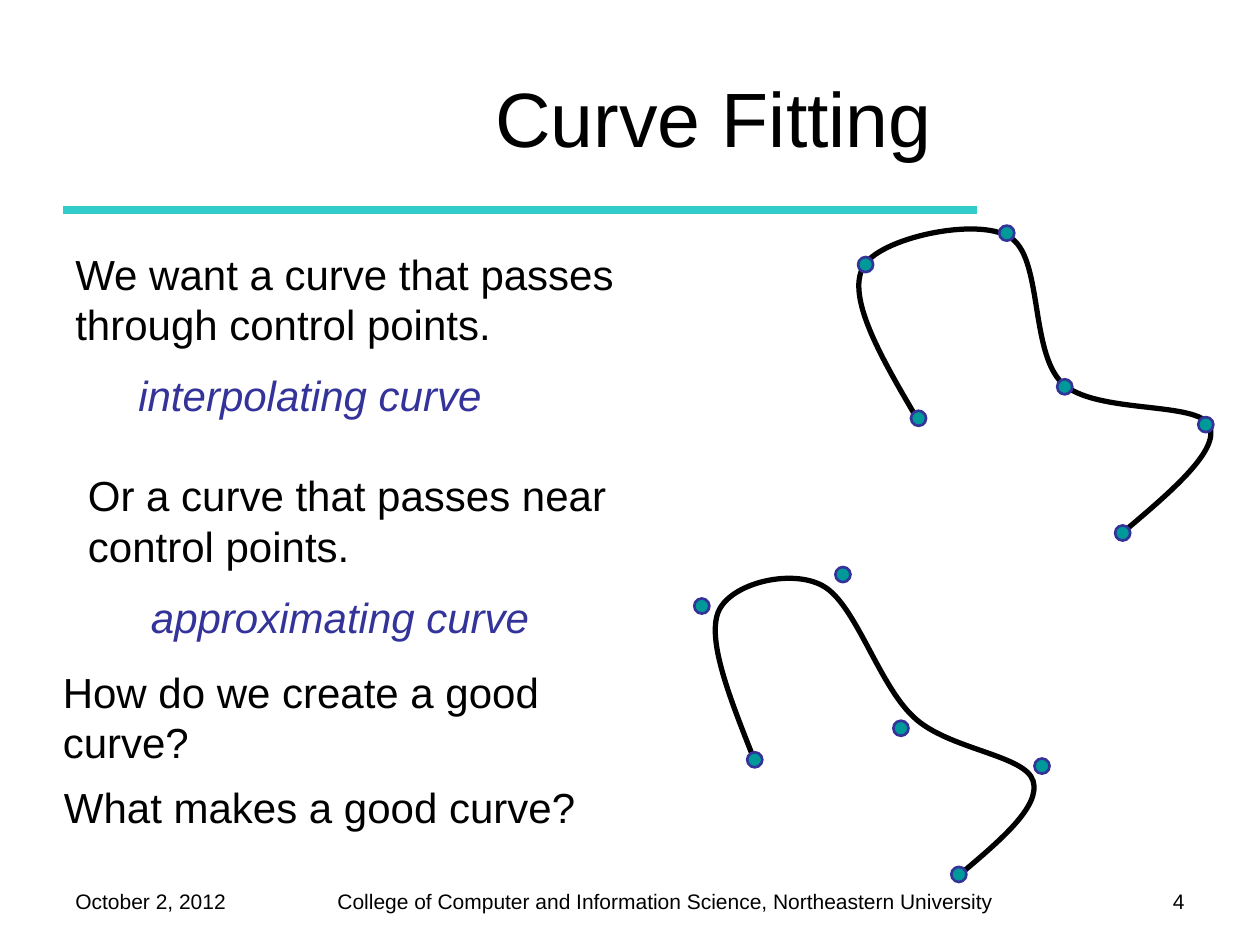
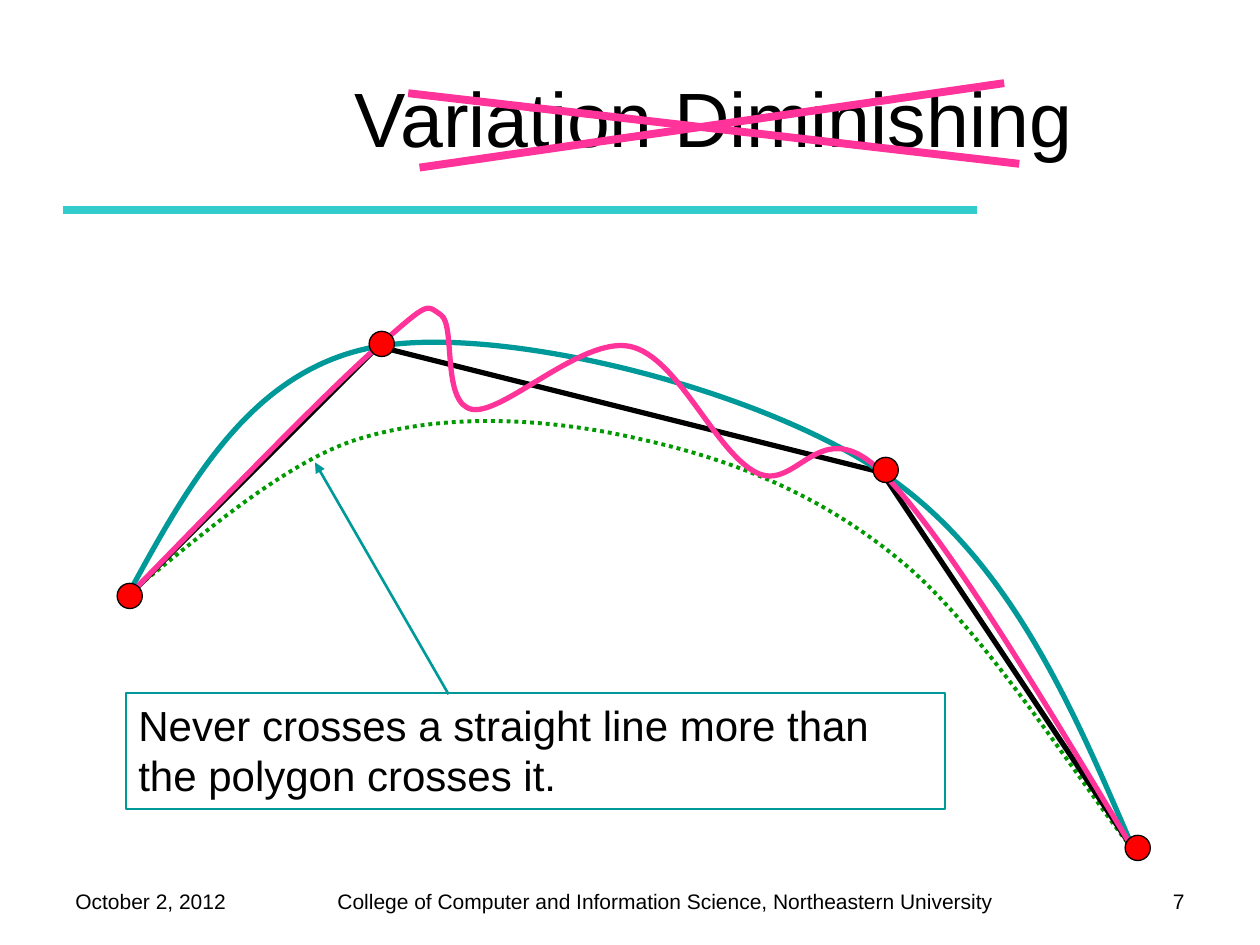
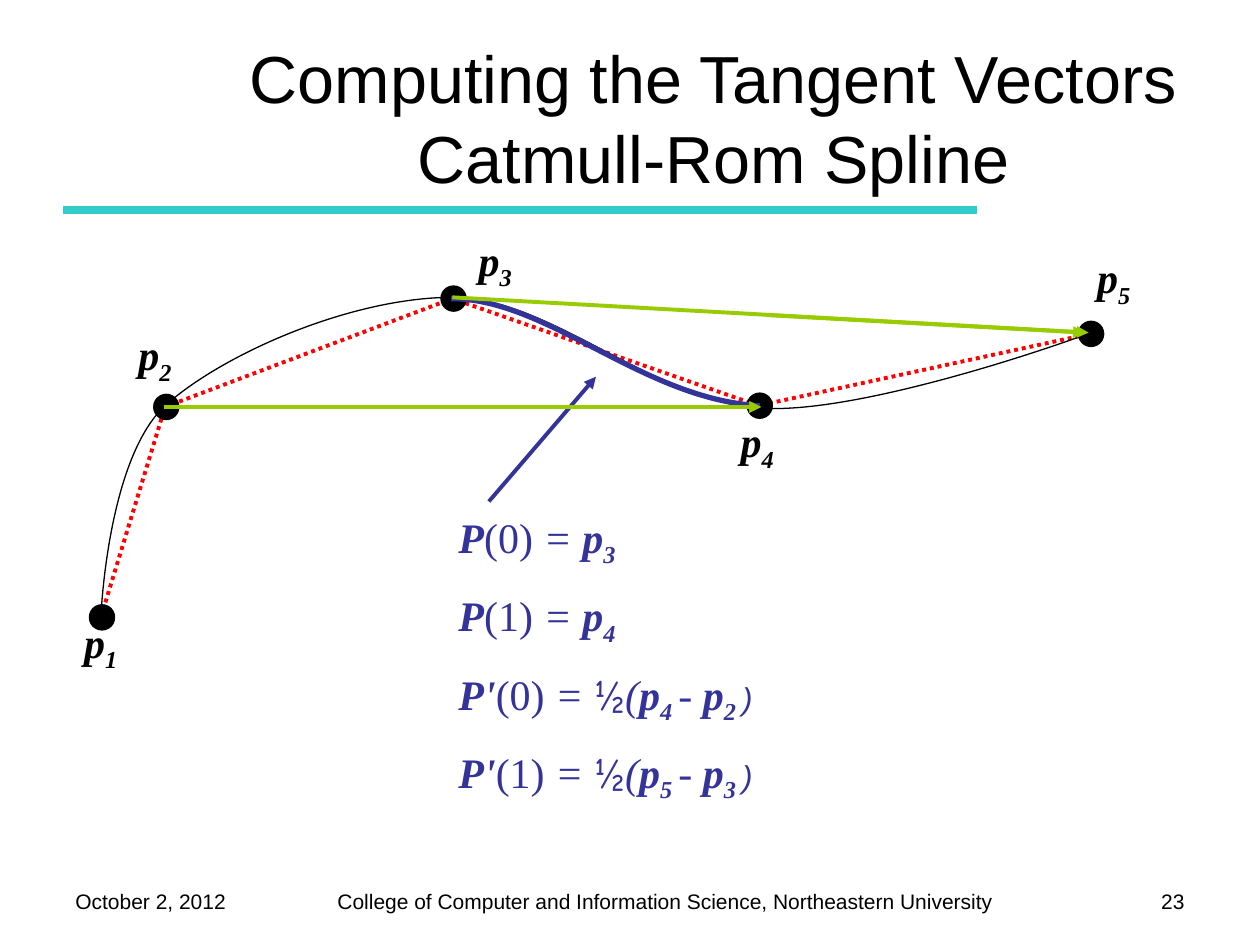
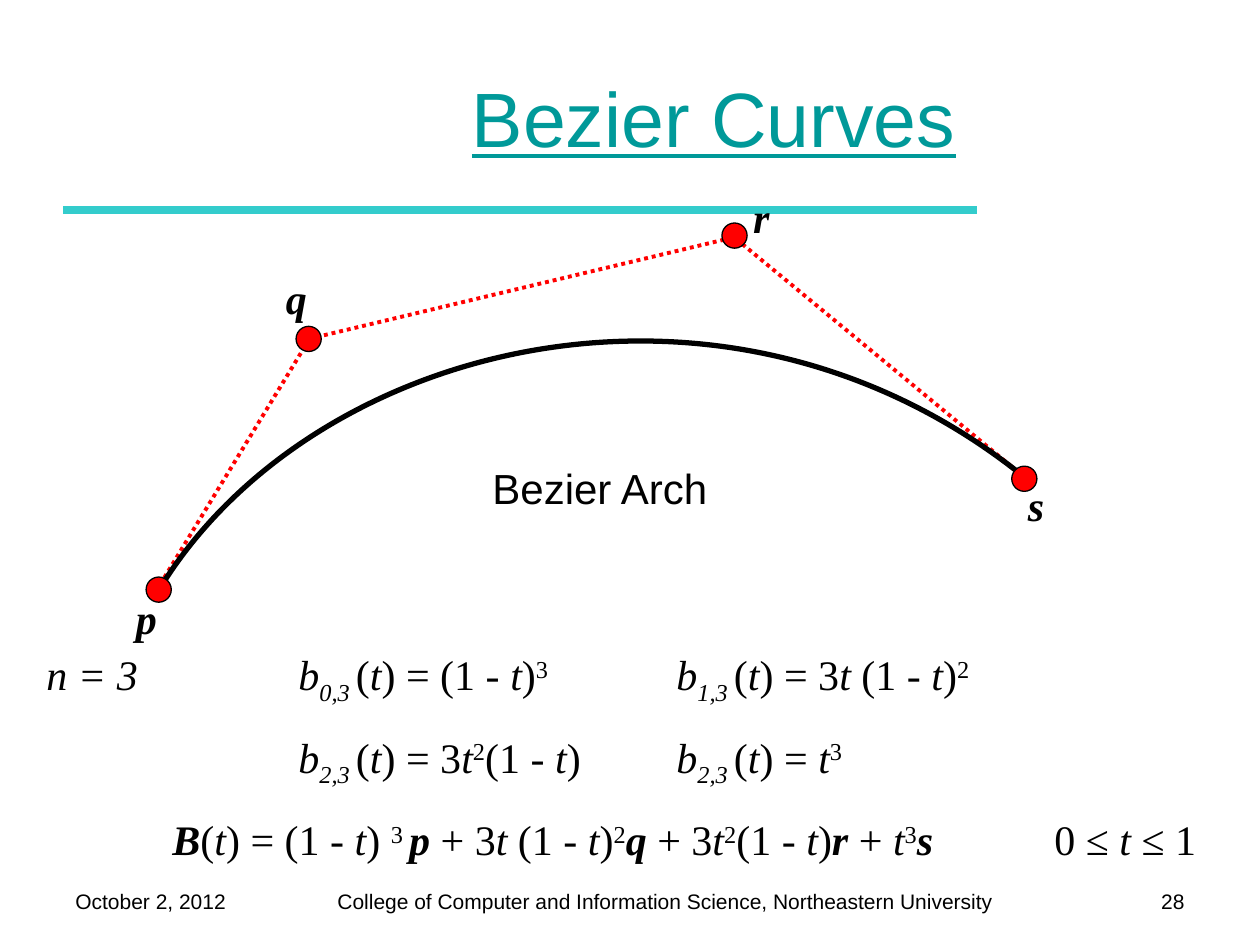
import pptx
import pptx.util
import pptx.dml.color
import pptx.enum.dml
import pptx.enum.shapes
import pptx.enum.text
import pptx.oxml.ns
import lxml.etree

Inches = pptx.util.Inches
Pt = pptx.util.Pt
RGBColor = pptx.dml.color.RGBColor
qn = pptx.oxml.ns.qn
Align = pptx.enum.text.PP_ALIGN
AutoSize = pptx.enum.text.MSO_AUTO_SIZE
DOTTED = pptx.enum.dml.MSO_LINE.ROUND_DOT

BLACK = RGBColor(0, 0, 0)
TEAL = RGBColor(0x00, 0x99, 0x99)
TURQUOISE = RGBColor(0x33, 0xCC, 0xCC)
INDIGO = RGBColor(0x33, 0x33, 0x99)
RED = RGBColor(0xFF, 0, 0)
PINK = RGBColor(0xFF, 0x33, 0x99)
GREEN = RGBColor(0x00, 0x99, 0x00)
LIME = RGBColor(0x99, 0xCC, 0x00)
ARIAL = "Arial"
TIMES = "Times New Roman"

DATE = "October 2, 2012"
FOOTER = "College of Computer and Information Science, Northeastern University"

# Text is split at "|"; the first letter of each part selects its style.
STYLES = {
    "r": {},
    "i": {"italic": True},
    "b": {"bold": True, "italic": True},
    "s": {"bold": True, "italic": True, "baseline": -25},
    "_": {"italic": True, "baseline": -25},
    "^": {"baseline": 30},
    "v": {"italic": True, "color": INDIGO},
    "h": {"name": "Comic Neue"},
    "c": {"name": ARIAL, "size": 18, "italic": True},
}

FITTING_TEXTS = [
    ((0.5, 1.92, 4.5, 1.5),
     ["rWe want a curve that passes through control points.", "v\tinterpolating curve"]),
    ((0.4, 5.24, 4.5, 0.9), ["rHow do we create a good curve?"]),
    ((0.41, 6.15, 4.5, 0.5), ["rWhat makes a good curve?"]),
    ((0.6, 3.68, 4.5, 1.5),
     ["rOr a curve that passes near control points.", "v\tapproximating curve"]),
]
INTERPOLATING = [
    (7.26, 3.29), (6.99, 2.83), (6.72, 2.36), (6.85, 2.12), (6.97, 1.89), (7.75, 1.72),
    (8.01, 1.88), (8.28, 2.03), (8.17, 2.79), (8.43, 3.04), (8.69, 3.29), (9.51, 3.18),
    (9.6, 3.38), (9.68, 3.57), (9.31, 3.89), (8.93, 4.21)]
APPROXIMATING = [
    (5.99, 6.04), (5.8, 5.56), (5.61, 5.09), (5.7, 4.86), (5.79, 4.63), (6.28, 4.51),
    (6.53, 4.65), (6.79, 4.79), (6.97, 5.43), (7.25, 5.69), (7.52, 5.95), (8.14, 5.99),
    (8.2, 6.2), (8.26, 6.4), (7.94, 6.67), (7.62, 6.94)]
CONTROL_POINTS = [(7.29, 3.32), (8.45, 3.07), (6.87, 2.1), (7.99, 1.85), (9.57, 3.37), (8.91, 4.23)]
APPROXIMATING_SHIFT = (-1.3, 2.71)

POLYGON = [(1, 4.75), (3, 2.75), (7, 3.75), (9, 6.75)]
INNER_CURVE = [
    (1, 4.72), (1.31, 4.51), (2.18, 3.68), (2.86, 3.48), (3.55, 3.27), (4.38, 3.32),
    (5.1, 3.49), (5.82, 3.65), (6.53, 3.93), (7.17, 4.47), (7.82, 5.01), (8.61, 6.27),
    (8.99, 6.74)]
SMOOTH_CURVE = [
    (1, 4.75), (1.5, 3.83), (2, 2.92), (3, 2.75), (4, 2.58), (6, 3.08),
    (7, 3.75), (8, 4.42), (8.5, 5.58), (9, 6.75)]
WAVY_CURVE = [
    (1, 4.75), (1.79, 3.94), (2.58, 3.12), (3, 2.75), (3.42, 2.38), (3.38, 2.42),
    (3.5, 2.5), (3.62, 2.58), (3.5, 3.21), (3.75, 3.25), (4, 3.29), (4.62, 2.67),
    (5, 2.75), (5.38, 2.83), (5.67, 3.58), (6, 3.75), (6.33, 3.92), (6.5, 3.25),
    (7, 3.75), (7.5, 4.25), (8.25, 5.5), (9, 6.75)]
CROSS = [((3.24, 0.74), (8.09, 1.3)), ((3.33, 1.33), (7.97, 0.66))]
VARIATION_NOTE = "rNever crosses a straight line more than the polygon crosses it."

SPLINE_POINTS = [(0.8, 4.9), (1.31, 3.23), (3.59, 2.37), (6.02, 3.22), (8.65, 2.65)]
SPLINE_LABELS = [(0.57, 4.84), (1, 2.56), (3.7, 1.81), (5.78, 3.25), (8.61, 1.95)]
SPLINE = [
    (0.8, 4.91), (0.8, 4.9), (0.85, 3.65), (1.31, 3.22), (1.78, 2.8), (2.8, 2.36),
    (3.59, 2.36), (4.38, 2.36), (5.2, 3.2), (6.05, 3.24), (6.89, 3.29), (8.68, 2.64),
    (8.68, 2.63)]
SPLINE_PIECE = [(3.58, 2.37), (4.35, 2.37), (5.1, 3.17), (6.03, 3.22)]
TANGENTS = [
    ((1.3, 3.23), (6.04, 3.23)), ((3.67, 3.23), (6.04, 3.23)),
    ((3.59, 2.36), (8.64, 2.64)), ((6.08, 2.5), (8.61, 2.64))]


def tangent_rule(end, first, second):
    return f"bP'|r({end})|i = |h½|i(|bp|s{first} |i- |bp|s{second} |c)"


SPLINE_RULES = [
    "bP|r(0)|i = |bp|s3",
    "bP|r(1)|i = |bp|s4",
    tangent_rule(0, 4, 2),
    tangent_rule(1, 5, 3),
]

BEZIER_POINTS = [(1.26, 4.68), (2.45, 2.69), (5.83, 1.87), (8.13, 3.8)]
BEZIER_ARCH = [(1.25, 4.7), (2.45, 2.7), (5.79, 1.86), (8.17, 3.82)]
BEZIER_SIDES = [
    ((1.24, 4.69), (2.45, 2.7)), ((8.17, 3.82), (5.81, 1.87)), ((2.45, 2.69), (5.84, 1.88))]
BEZIER_LABELS = [("p", 0.98, 4.65), ("q", 2.17, 2.11), ("r", 5.88, 1.47), ("s", 8.06, 3.76)]
ONE_MINUS_T = "r(1 - |it|r)"


def basis(index):
    return f"ib|_{index},3 |r(|it|r) = "


BEZIER_FORMULAS = [
    f"in = 3|r\t|{basis(0)}|{ONE_MINUS_T}|^3|r\t|{basis(1)}|r3|it |{ONE_MINUS_T}|^2",
    f"r\t|{basis(2)}|r3|it|^2|{ONE_MINUS_T}|r\t|{basis(2)}|it|^3",
    f"b\tB|r(|it|r) = |{ONE_MINUS_T}|r |^3 |bp |r+ 3|it |{ONE_MINUS_T}|^2|bq |r+ 3|it|^2|"
    f"{ONE_MINUS_T}|br|r + |it|^3|bs|r\t0 ≤ |it |r≤ 1",
]
FORMULA_TABS = [(2, 5), (2, 5), (1, 8)]


def set_font(font, name, size, color):
    font.name = name
    font.size = Pt(size)
    font.color.rgb = color


def set_line(line, color, width, dash=None):
    line.color.rgb = color
    line.width = Pt(width)
    if dash:
        line.dash_style = dash


def add_spans(para, markup):
    for part in markup.split("|"):
        span = para.add_run()
        span.text = part[1:]
        style = STYLES[part[0]]
        for key in ("bold", "italic", "name"):
            if key in style:
                setattr(span.font, key, style[key])
        if "size" in style:
            span.font.size = Pt(style["size"])
        if "color" in style:
            span.font.color.rgb = style["color"]
        if "baseline" in style:
            span.font._element.set("baseline", str(style["baseline"] * 1000))


def add_tabs(para, stops):
    tab_list = lxml.etree.SubElement(para._p.get_or_add_pPr(), qn("a:tabLst"))
    for stop in stops:
        lxml.etree.SubElement(tab_list, qn("a:tab"), pos=str(Inches(stop)), algn="l")


def add_text(page, place, lines, name=ARIAL, size=24, color=BLACK,
             align=None, tabs=None, after=None, grow=True):
    box = page.shapes.add_textbox(*map(Inches, place))
    frame = box.text_frame
    frame.word_wrap = True
    frame.auto_size = AutoSize.SHAPE_TO_FIT_TEXT if grow else AutoSize.NONE
    for index, markup in enumerate(lines):
        para = frame.paragraphs[0] if index == 0 else frame.add_paragraph()
        if index:
            para.space_before = Pt(size / 2)
        if after:
            para.space_after = Pt(after)
        if align:
            para.alignment = align
        if tabs:
            add_tabs(para, tabs[index])
        set_font(para.font, name, size, color)
        add_spans(para, markup)
    return box


def add_line(page, ends, color, width, dash=None, arrow=False):
    (left, top), (right, bottom) = ends
    line = page.shapes.add_connector(
        pptx.enum.shapes.MSO_CONNECTOR.STRAIGHT, *map(Inches, (left, top, right, bottom)))
    set_line(line.line, color, width, dash)
    if arrow:
        lxml.etree.SubElement(line.line._get_or_add_ln(), qn("a:tailEnd"), type="triangle")
    lxml.etree.SubElement(line._element.spPr, qn("a:effectLst"))
    return line


def add_outline(page, points, color, width, dash=None):
    start, *rest = [(Inches(x), Inches(y)) for x, y in points]
    builder = page.shapes.build_freeform(*start)
    builder.add_line_segments(rest, close=False)
    outline = builder.convert_to_shape()
    outline.shadow.inherit = False
    outline.fill.background()
    set_line(outline.line, color, width, dash)
    return outline


def add_curve(page, points, color, width, dash=None):
    curve = add_outline(page, points, color, width, dash)
    steps = list(curve._element.iter(qn("a:lnTo")))
    for first in range(0, len(steps), 3):
        bend = lxml.etree.Element(qn("a:cubicBezTo"))
        steps[first].addprevious(bend)
        for step in steps[first:first + 3]:
            bend.append(step[0])
            step.getparent().remove(step)


def add_dots(page, centers, size, fill, color, width, shift=(0, 0)):
    for x, y in centers:
        left, top = x + shift[0] - size / 2, y + shift[1] - size / 2
        dot = page.shapes.add_shape(
            pptx.enum.shapes.MSO_SHAPE.OVAL, *map(Inches, (left, top, size, size)))
        dot.shadow.inherit = False
        dot.fill.solid()
        dot.fill.fore_color.rgb = fill
        set_line(dot.line, color, width)


def add_page(deck, number, title, size=44, color=BLACK, underline=None):
    page = deck.slides.add_slide(deck.slide_layouts[5])
    heading = page.shapes.title
    heading.left, heading.top, heading.width, heading.height = map(Inches, (1.83, 0.3, 7.67, 1.25))
    frame = heading.text_frame
    frame.word_wrap = True
    frame.auto_size = AutoSize.NONE
    frame.vertical_anchor = pptx.enum.text.MSO_ANCHOR.MIDDLE
    para = frame.paragraphs[0]
    para.text = title
    para.alignment = Align.CENTER
    set_font(para.font, ARIAL, size, color)
    para.font.underline = underline
    add_text(page, (0.5, 7, 1.75, 0.33), ["r" + DATE], size=12, grow=False)
    add_text(page, (8.67, 7, 0.83, 0.35), [f"r{number}"], size=12, align=Align.RIGHT, grow=False)
    return page


def move_to_layout(page):
    footer = add_text(page, (2.58, 7, 5.5, 0.3), ["r" + FOOTER], size=12)
    rule = add_line(page, ((0.5, 1.67), (7.75, 1.67)), TURQUOISE, 4.5)
    for shared in (footer, rule):
        page.slide_layout.shapes.element.append(shared._element)


def draw_fitting(deck):
    page = add_page(deck, 4, "Curve Fitting")
    move_to_layout(page)
    for curve, shift in ((INTERPOLATING, (0, 0)), (APPROXIMATING, APPROXIMATING_SHIFT)):
        add_curve(page, curve, BLACK, 3)
        add_dots(page, CONTROL_POINTS, 0.12, TEAL, INDIGO, 1.5, shift)
    for place, lines in FITTING_TEXTS:
        add_text(page, place, lines)


def draw_variation(deck):
    page = add_page(deck, 7, "Variation Diminishing")
    add_curve(page, INNER_CURVE, GREEN, 2.25, DOTTED)
    add_outline(page, POLYGON, BLACK, 3)
    add_curve(page, SMOOTH_CURVE, TEAL, 3)
    add_curve(page, WAVY_CURVE, PINK, 3)
    add_dots(page, POLYGON, 0.2, RED, BLACK, 0.75, (0.03, -0.02))
    note = add_text(page, (1, 5.5, 6.5, 0.92), [VARIATION_NOTE])
    set_line(note.line, TEAL, 1.5)
    add_line(page, ((3.56, 5.51), (2.5, 3.67)), TEAL, 1.5, arrow=True)
    for ends in CROSS:
        add_line(page, ends, PINK, 4.5)


def draw_spline(deck):
    page = add_page(deck, 23, "Computing the Tangent Vectors\vCatmull-Rom Spline", size=38)
    add_outline(page, SPLINE_POINTS, RED, 2.25, DOTTED)
    add_dots(page, SPLINE_POINTS, 0.2, BLACK, BLACK, 0.75, (0.01, 0))
    for number, (left, top) in enumerate(SPLINE_LABELS, 1):
        add_text(page, (left, top, 0.6, 0.5), [f"bp|s{number}"], TIMES)
    add_curve(page, SPLINE, BLACK, 0.75)
    add_text(page, (3.54, 4.01, 4.78, 2.3), SPLINE_RULES, TIMES, color=INDIGO)
    add_curve(page, SPLINE_PIECE, INDIGO, 3)
    add_line(page, ((3.88, 3.98), (4.73, 2.99)), INDIGO, 2.25, arrow=True)
    for ends in TANGENTS:
        add_line(page, ends, LIME, 2.25, arrow=True)


def draw_bezier(deck):
    page = add_page(deck, 28, "Bezier Curves", color=TEAL, underline=True)
    for ends in BEZIER_SIDES:
        add_line(page, ends, RED, 2.25, DOTTED)
    add_curve(page, BEZIER_ARCH, BLACK, 3)
    add_dots(page, BEZIER_POINTS, 0.2, RED, BLACK, 0.75)
    add_text(page, (3.81, 3.62, 2.02, 0.5), ["rBezier Arch"])
    for letter, left, top in BEZIER_LABELS:
        add_text(page, (left, top, 0.47, 0.5), ["b" + letter], TIMES)
    add_text(page, (0.27, 5.1, 9.35, 1.82), BEZIER_FORMULAS, TIMES, tabs=FORMULA_TABS, after=2.4)


def main():
    deck = pptx.Presentation()
    deck.slide_width, deck.slide_height = Inches(10), Inches(7.5)
    for draw in (draw_fitting, draw_variation, draw_spline, draw_bezier):
        draw(deck)
    deck.save("out.pptx")


if __name__ == "__main__":
    main()
